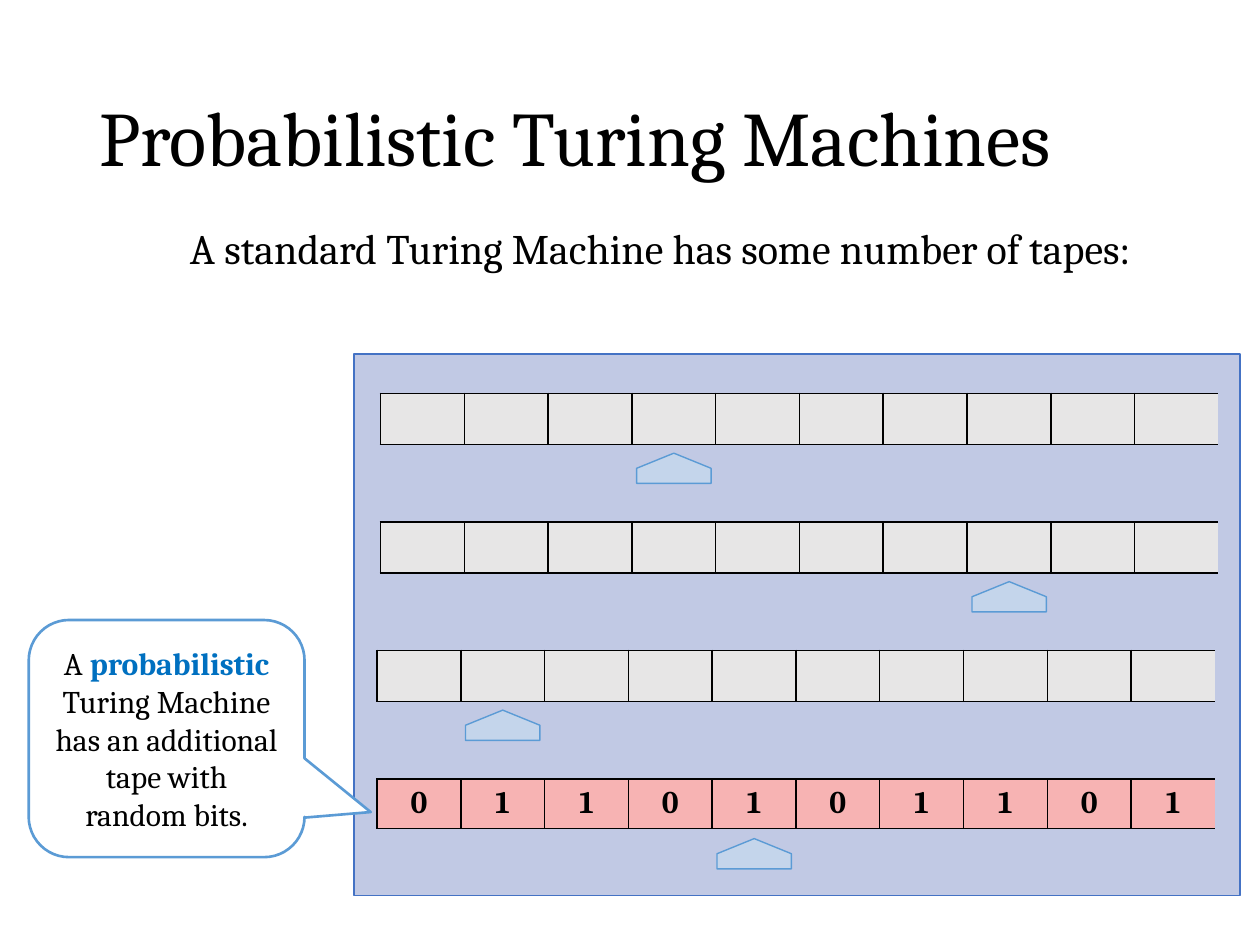
from lxml.etree import SubElement, Element
from pptx import Presentation
from pptx.dml.color import RGBColor
from pptx.enum.shapes import MSO_SHAPE as Shape
from pptx.enum.text import MSO_ANCHOR as Anchor, MSO_AUTO_SIZE as AutoSize, PP_ALIGN as Align
from pptx.oxml.ns import qn
from pptx.util import Cm, Pt

FONT = "Cambria"
BLACK = RGBColor(0x00, 0x00, 0x00)
WHITE = RGBColor(0xFF, 0xFF, 0xFF)
PANEL_FILL = RGBColor(0xC1, 0xC9, 0xE4)
PANEL_LINE = RGBColor(0x44, 0x72, 0xC4)
TAPE_GREY = RGBColor(0xE7, 0xE6, 0xE6)
TAPE_PINK = RGBColor(0xF7, 0xB3, 0xB3)
HEAD_FILL = RGBColor(0xC4, 0xD5, 0xEB)
HEAD_LINE = RGBColor(0x5B, 0x9B, 0xD5)
ACCENT = RGBColor(0x00, 0x70, 0xC0)

CELLS, CELL_WIDTH, CELL_HEIGHT = 10, 1.69, 1.0
HEAD_LENGTH, HEAD_SPAN, HEAD_DROP = 0.61, 1.5, 1.51
TAPE_TOP, TAPE_PITCH = 0.79, 2.59

# Offset from the panel's left side, column under the head, bits, fill
TAPES = [
    (0.53, 3, "", TAPE_GREY),
    (0.53, 7, "", TAPE_GREY),
    (0.46, 1, "", TAPE_GREY),
    (0.46, 4, "0110101101", TAPE_PINK),
]


def add_span(para, text, size, color=BLACK, bold=False):
    span = para.add_run()
    span.text = text
    span.font.name = FONT
    span.font.size = Pt(size)
    span.font.bold = bold
    span.font.color.rgb = color


def add_box(page, kind, left, top, width, height, fill, line, weight=0.79):
    box = page.shapes.add_shape(kind, Cm(left), Cm(top), Cm(width), Cm(height))
    box.shadow.inherit = False
    box.fill.solid()
    box.fill.fore_color.rgb = fill
    box.line.color.rgb = line
    box.line.width = Pt(weight)
    return box


def set_borders(cell, open_right):
    properties = cell._tc.get_or_add_tcPr()
    for index, side in enumerate(("lnL", "lnR", "lnT", "lnB")):
        border = Element(qn(f"a:{side}"), w=str(Pt(1)))
        if side == "lnR" and open_right:
            SubElement(border, qn("a:noFill"))
        else:
            solid = SubElement(border, qn("a:solidFill"))
            SubElement(solid, qn("a:srgbClr"), val=str(BLACK))
        properties.insert(index, border)


def add_title(page, left, top, width, height):
    title = page.shapes.title
    title.left, title.top, title.width, title.height = map(Cm, (left, top, width, height))
    frame = title.text_frame
    frame.auto_size = AutoSize.NONE
    frame.vertical_anchor = Anchor.MIDDLE
    para = frame.paragraphs[0]
    para.alignment = Align.LEFT
    para.line_spacing = 0.9
    add_span(para, "Probabilistic Turing Machines", 44)


def add_intro(page, left, top, width, height):
    box = page.shapes.add_textbox(Cm(left), Cm(top), Cm(width), Cm(height))
    box.text_frame.word_wrap = True
    add_span(box.text_frame.paragraphs[0],
             "A standard Turing Machine has some number of tapes:", 24)


def add_tape(page, left, top, head_column, bits, fill):
    frame = page.shapes.add_table(1, CELLS, Cm(left), Cm(top),
                                  Cm(CELLS * CELL_WIDTH), Cm(CELL_HEIGHT))
    table = frame.table
    table.first_row = table.horz_banding = False
    for column, cell in enumerate(table.iter_cells()):
        cell.fill.solid()
        cell.fill.fore_color.rgb = fill
        set_borders(cell, open_right=column == CELLS - 1)
        if bits:
            para = cell.text_frame.paragraphs[0]
            para.alignment = Align.CENTER
            add_span(para, bits[column], 18, bold=True)

    # Head pointing up at its cell
    center = left + (head_column + 0.5) * CELL_WIDTH
    head = add_box(page, Shape.PENTAGON, center - HEAD_LENGTH / 2,
                   top + HEAD_DROP - HEAD_SPAN / 2,
                   HEAD_LENGTH, HEAD_SPAN, HEAD_FILL, HEAD_LINE)
    head.rotation = 270


def add_machine(page, left, top, width, height):
    add_box(page, Shape.RECTANGLE, left, top, width, height, PANEL_FILL, PANEL_LINE)
    for index, (offset, head_column, bits, fill) in enumerate(TAPES):
        add_tape(page, left + offset, top + TAPE_TOP + index * TAPE_PITCH,
                 head_column, bits, fill)


def add_callout(page, left, top, width, height):
    box = add_box(page, Shape.ROUNDED_RECTANGULAR_CALLOUT, left, top, width, height,
                  WHITE, HEAD_LINE, 1.5)
    for index, value in enumerate((0.74, 0.31, 0.17)):
        box.adjustments[index] = value
    box.text_frame.vertical_anchor = Anchor.MIDDLE
    para = box.text_frame.paragraphs[0]
    para.alignment = Align.CENTER
    add_span(para, "A ", 18)
    add_span(para, "probabilistic ", 18, ACCENT, bold=True)
    add_span(para, "Turing Machine has an additional tape with random bits.", 18)


def main():
    deck = Presentation()
    deck.slide_width, deck.slide_height = Cm(25.4), Cm(19.05)
    page = deck.slides.add_slide(deck.slide_layouts[5])
    add_title(page, 1.75, 1.02, 21.9, 3.68)
    add_machine(page, 7.14, 7.14, 17.86, 10.92)
    add_intro(page, 3.58, 4.37, 19.46, 1.27)
    add_callout(page, 0.58, 12.5, 5.56, 4.78)
    deck.save("out.pptx")


if __name__ == "__main__":
    main()
